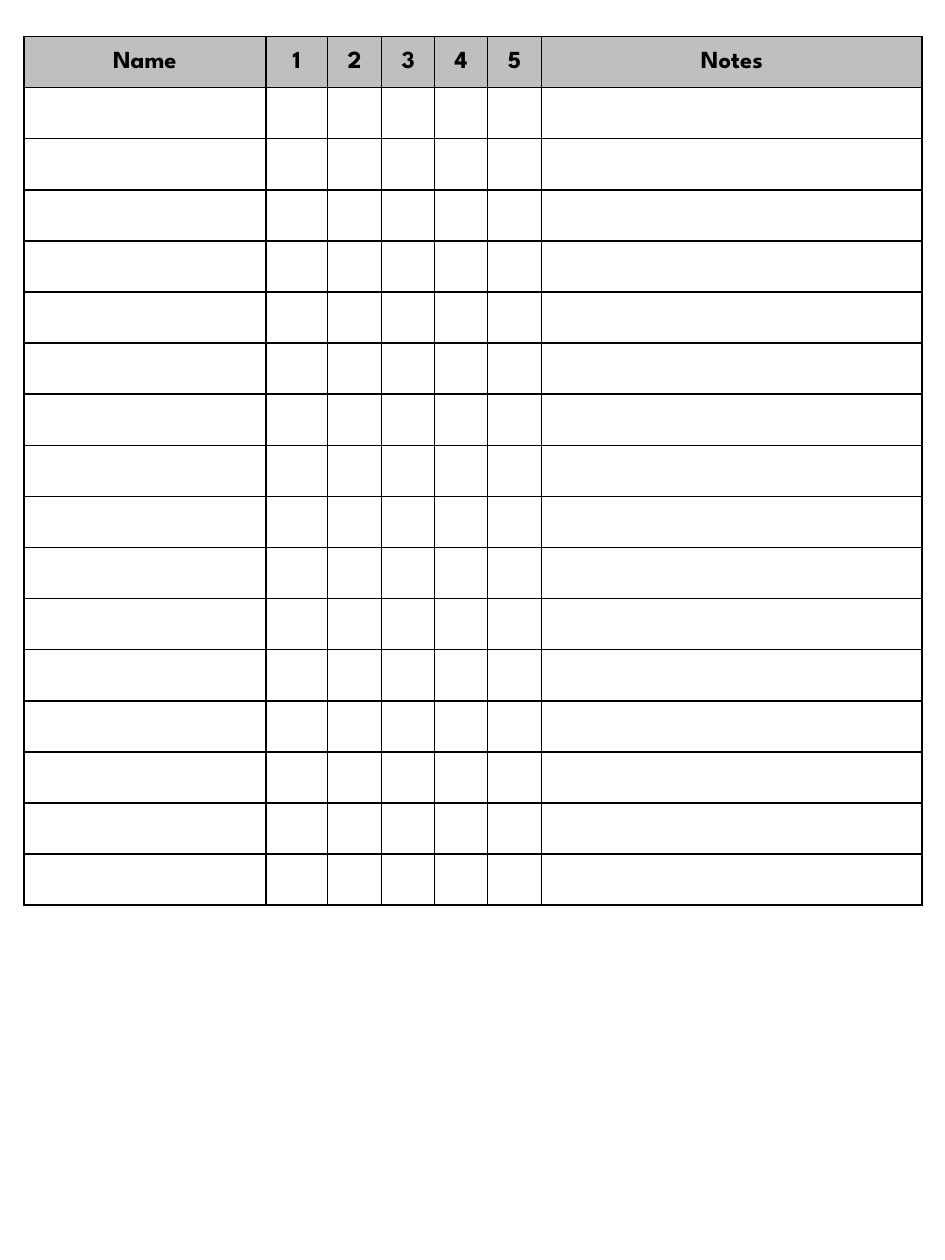
"""Build a one-page name checklist with five numbered columns and notes."""
from lxml import etree
from pptx import Presentation
from pptx.dml.color import RGBColor
from pptx.enum.text import MSO_ANCHOR, PP_ALIGN
from pptx.oxml.ns import qn
from pptx.util import Inches, Pt

COLORS = {"ink": "000000", "header": "BFBFBF"}
HEADERS = ["Name", "1", "2", "3", "4", "5", "Notes"]
WIDTHS = [1.92, 0.49, 0.43, 0.42, 0.42, 0.43, 3.02]
ROW_COUNT = 17


def write_text(cell, text, size=14, font="League Spartan", color="ink", bold=True):
    paragraph = cell.text_frame.paragraphs[0]
    paragraph.alignment = PP_ALIGN.CENTER
    run = paragraph.add_run()
    run.text = text
    run.font.size = Pt(size)
    run.font.name = font
    run.font.bold = bold
    run.font.color.rgb = RGBColor.from_string(COLORS[color])


def add_borders(cell, color="ink", width=1):
    properties = cell._tc.get_or_add_tcPr()
    for index, side in enumerate(("a:lnL", "a:lnR", "a:lnT", "a:lnB")):
        line = etree.Element(qn(side), w=str(Pt(width)))
        fill = etree.SubElement(line, qn("a:solidFill"))
        etree.SubElement(fill, qn("a:srgbClr"), val=COLORS[color])
        properties.insert(index, line)


presentation = Presentation()
presentation.slide_width = Inches(7.5)
presentation.slide_height = Inches(10)
slide = presentation.slides.add_slide(presentation.slide_layouts[6])

shape = slide.shapes.add_table(
    ROW_COUNT, len(HEADERS), Inches(0.19), Inches(0.29), Inches(sum(WIDTHS)), Inches(6.9)
)
table = shape.table
table.horz_banding = False
for column, width in zip(table.columns, WIDTHS):
    column.width = Inches(width)

for cell in table.iter_cells():
    cell.vertical_anchor = MSO_ANCHOR.MIDDLE
    cell.margin_top = cell.margin_bottom = Inches(0.03)
    cell.fill.background()
    add_borders(cell)

for cell, header in zip(table.rows[0].cells, HEADERS):
    cell.fill.solid()
    cell.fill.fore_color.rgb = RGBColor.from_string(COLORS["header"])
    write_text(cell, header)

presentation.save("out.pptx")
